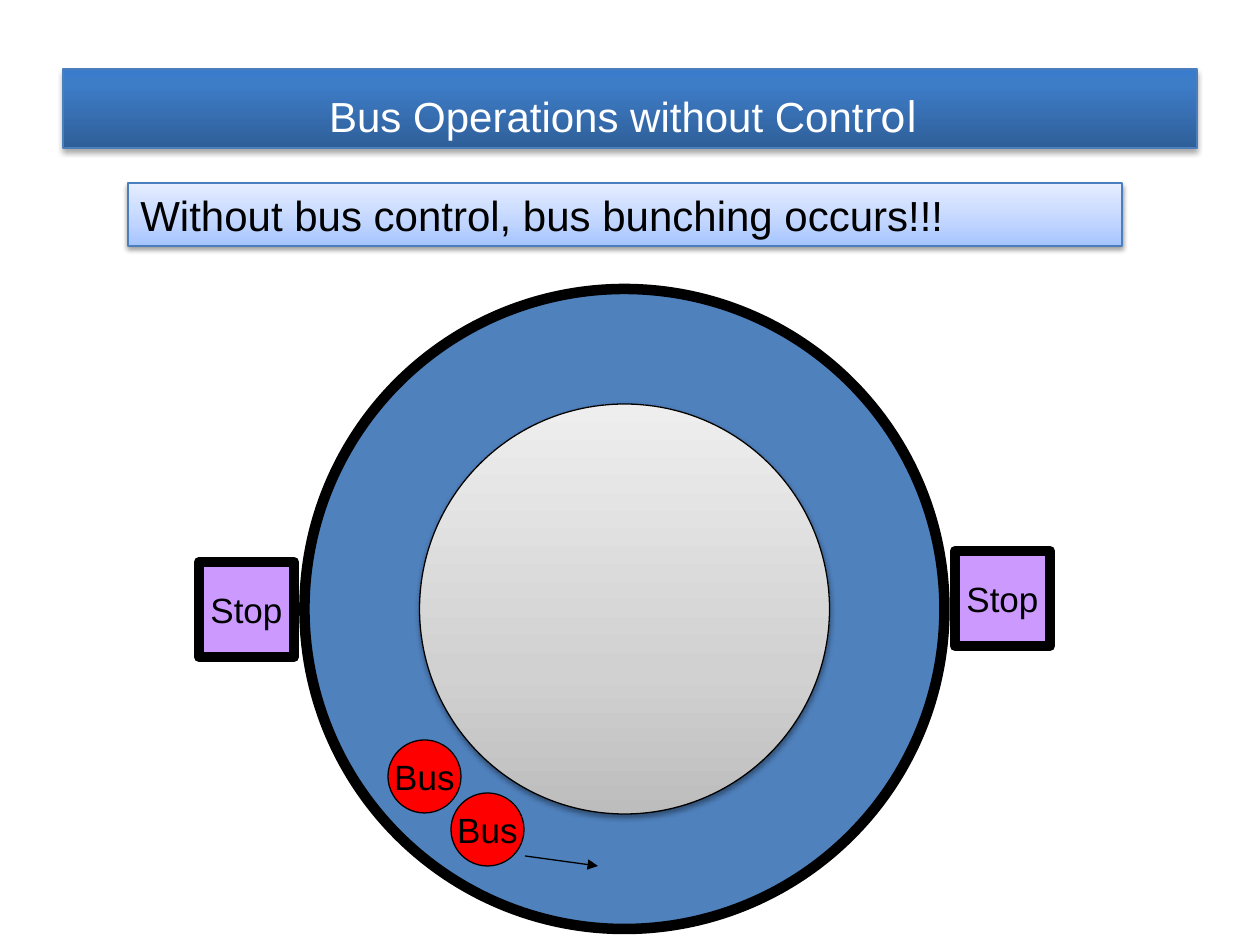
from lxml import etree
from pptx import Presentation
from pptx.dml.color import RGBColor
from pptx.enum.shapes import MSO_CONNECTOR, MSO_SHAPE
from pptx.enum.text import MSO_ANCHOR, MSO_AUTO_SIZE, PP_ALIGN
from pptx.oxml import parse_xml
from pptx.oxml.ns import nsdecls, qn
from pptx.util import Pt

OVAL, RECT = MSO_SHAPE.OVAL, MSO_SHAPE.RECTANGLE
STRAIGHT = MSO_CONNECTOR.STRAIGHT
TOP, MIDDLE = MSO_ANCHOR.TOP, MSO_ANCHOR.MIDDLE
LEFT, CENTER = PP_ALIGN.LEFT, PP_ALIGN.CENTER
GROW, FIXED = MSO_AUTO_SIZE.SHAPE_TO_FIT_TEXT, MSO_AUTO_SIZE.NONE
EMU_PER_PX = 914400 / 126
BLACK, BANNER_EDGE = "000000", "4B7EBC"
GREY = [(0, "BDBDBD"), (35, "D1D1D1"), (100, "EEEEEE")]
PALE_BLUE = [(0, "A4C4FF"), (35, "BFD4FF"), (100, "E6EEFF")]
DEEP_BLUE = [(0, "2F5F99"), (80, "3D7CC7"), (100, "3A7CCB")]


def px(length):
    """Turn pixels into EMU."""
    return round(length * EMU_PER_PX)


def color(hex_value):
    """Turn a hex string into a colour."""
    return RGBColor.from_string(hex_value)


def apply(target, formats):
    """Set every attribute named in formats on target."""
    for name, value in formats.items():
        setattr(target, name, value)


def add_body(slide, kind, box, fill, edge=BLACK, weight=0.75):
    """Add a shape with a solid hex fill or a list of gradient stops."""
    body = slide.shapes.add_shape(kind, *map(px, box))
    body.shadow.inherit = False
    body.line.color.rgb = color(edge)
    body.line.width = Pt(weight)
    if isinstance(fill, str):
        body.fill.solid()
        body.fill.fore_color.rgb = color(fill)
    else:
        paint_gradient(body, fill)
    return body


def paint_gradient(body, stops):
    """Fill a shape with stops that run from bottom to top."""
    body.fill.gradient()
    body.fill.gradient_angle = 90
    stop_list = body._element.spPr.find(qn("a:gradFill")).find(qn("a:gsLst"))
    for stop in list(stop_list):
        stop_list.remove(stop)
    for percent, hex_value in stops:
        stop_list.append(parse_xml(
            f'<a:gs {nsdecls("a")} pos="{percent * 1000}"><a:srgbClr val="{hex_value}"/></a:gs>'))


def cast_shadow(body, opacity, distance):
    """Drop a soft black shadow straight down."""
    effects = body._element.spPr.find(qn("a:effectLst"))
    effects.append(parse_xml(
        f'<a:outerShdw {nsdecls("a")} blurRad="{Pt(3.1)}" dist="{Pt(distance)}" dir="5400000" '
        f'rotWithShape="0"><a:srgbClr val="{BLACK}"><a:alpha val="{opacity * 1000}"/>'
        f'</a:srgbClr></a:outerShdw>'))


def write(body, runs, size, frame_formats, paragraph_formats, ink=BLACK):
    """Write one paragraph of (text, font) runs in a shape."""
    apply(body.text_frame, frame_formats)
    paragraph = body.text_frame.paragraphs[0]
    apply(paragraph, paragraph_formats)
    for text, font in runs:
        run = paragraph.add_run()
        run.text = text
        apply(run.font, {"name": font, "size": Pt(size)})
        run.font.color.rgb = color(ink)


def add_marker(slide, kind, box, fill, label, weight=0.75):
    """Add a labelled bus or stop."""
    marker = add_body(slide, kind, box, fill, weight=weight)
    write(marker, [(label, "Arial")], 20,
          {"word_wrap": False, "vertical_anchor": MIDDLE}, {"alignment": CENTER})


def add_heading(slide, left, top, width, height):
    """Add the title bar."""
    bar = add_body(slide, RECT, (left, top, width, height), DEEP_BLUE, BANNER_EDGE)
    cast_shadow(bar, 35, 1.8)
    write(bar, [("Bus Operations without Cont", "Arial"), ("rol ", "DejaVu Sans")], 24,
          {"word_wrap": True, "vertical_anchor": TOP, "auto_size": FIXED},
          {"alignment": CENTER, "line_spacing": 1.3}, "FFFFFF")


def add_message(slide, left, top, width, height):
    """Add the banner with the main message."""
    banner = add_body(slide, RECT, (left, top, width, height), PALE_BLUE, BANNER_EDGE)
    cast_shadow(banner, 38, 1.6)
    write(banner, [("Without bus control, bus bunching occurs!!!", "Arial")], 24,
          {"word_wrap": True, "vertical_anchor": TOP, "auto_size": GROW},
          {"alignment": LEFT})


def add_route(slide, left, top, width, height):
    """Add the ring road with its buses, stops and direction arrow."""
    middle = left + width / 2
    island_size, bus_size, stop_size = 410, 73, 95

    add_body(slide, OVAL, (middle - height / 2, top, height, height), "4F81BD", weight=6)
    for x, y in [(189, 451), (252, 504)]:
        add_marker(slide, OVAL, (left + x, top + y, bus_size, bus_size), "FF0000", "Bus")

    island = add_body(slide, OVAL, (middle - island_size / 2, top + (height - island_size) / 2,
                                    island_size, island_size), GREY)
    cast_shadow(island, 38, 1.6)
    for x, y in [(0, 273), (width - stop_size, 262)]:
        add_marker(slide, RECT, (left + x, top + y, stop_size, stop_size), "CC99FF", "Stop", 6)

    direction = slide.shapes.add_connector(
        STRAIGHT, px(left + 326), px(top + 567), px(left + 399), px(top + 577))
    direction.line.color.rgb = color(BLACK)
    direction.line.width = Pt(0.75)
    etree.SubElement(direction.line._get_or_add_ln(), qn("a:tailEnd"), type="triangle")
    etree.SubElement(direction._element.spPr, qn("a:effectLst"))


def main():
    """Build and save the slide."""
    deck = Presentation()
    apply(deck, {"slide_width": px(1260), "slide_height": px(945)})
    slide = deck.slides.add_slide(deck.slide_layouts[6])
    add_route(slide, 199, 289, 851, 640)
    add_message(slide, 128, 183, 994, 63)
    add_heading(slide, 63, 69, 1134, 79)
    deck.save("out.pptx")


if __name__ == "__main__":
    main()
